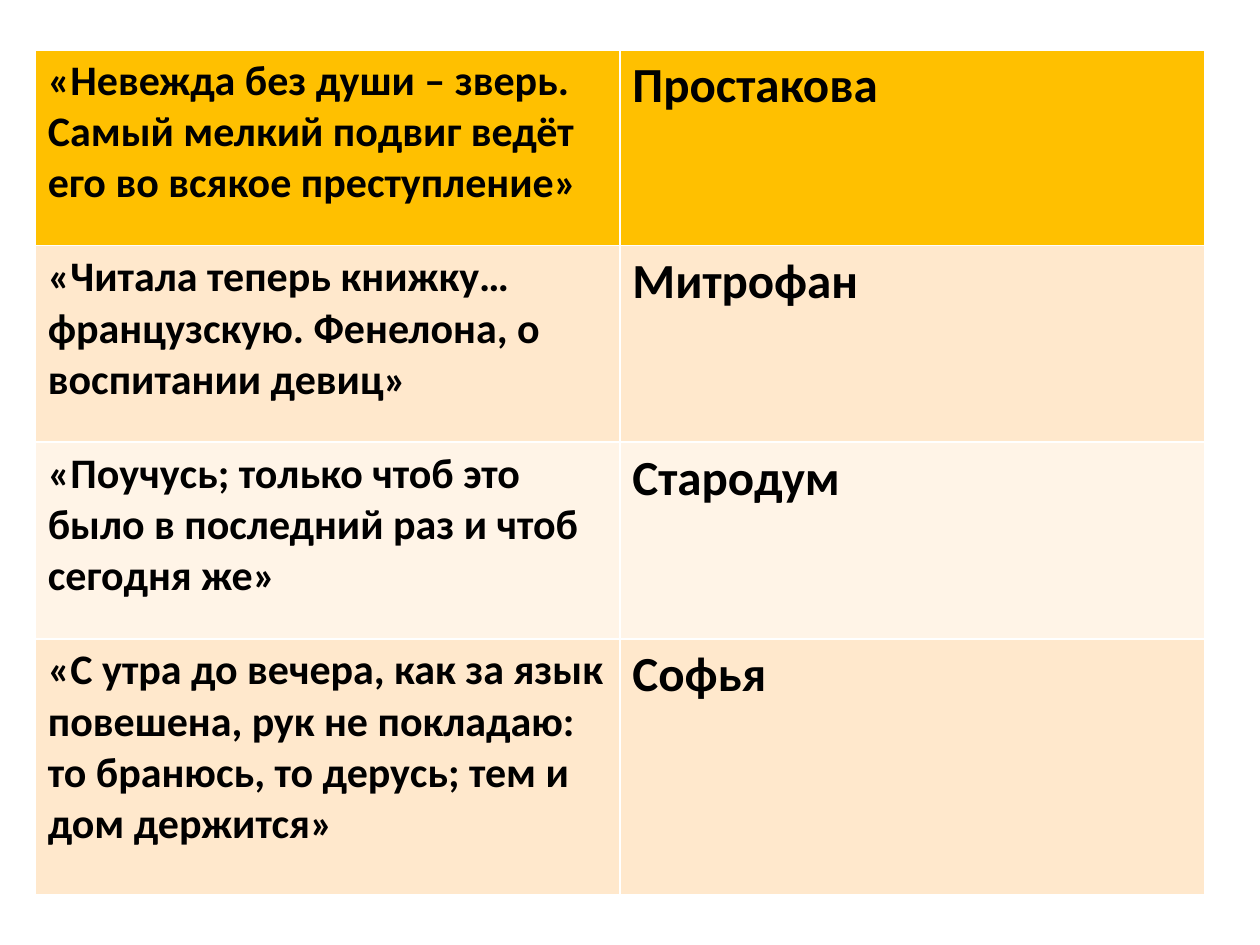
import pptx
import pptx.dml.color
import pptx.oxml
import pptx.oxml.ns
import pptx.util
from pptx.util import Inches, Pt

# Content: quotation paragraphs, character, row fill, row height
ROWS = [
    (["«Невежда без души – зверь. Самый мелкий подвиг ведёт его во всякое преступление»"],
     "Простакова", "FFC000", 1.56),
    (["«Читала теперь книжку… французскую. Фенелона, о воспитании девиц»"],
     "Митрофан", "FFE8CC", 1.56),
    (["«Поучусь; только чтоб это было в последний раз и чтоб", "сегодня же»"],
     "Стародум", "FFF4E7", 1.56),
    (["«С утра до вечера, как за язык повешена, рук не покладаю: "
      "то бранюсь, то дерусь; тем и дом держится»"],
     "Софья", "FFE8CC", 2.03),
]
LEFT, TOP, COL_WIDTH = 0.28, 0.39, 4.64
QUOTE_SIZE, NAME_SIZE = 24, 28


def rgb(value):
    return pptx.dml.color.RGBColor.from_string(value)


def set_borders(cell, top_width):
    """White rules on all four sides; they must precede the cell fill."""
    tcPr = cell._tc.get_or_add_tcPr()
    for side, width in (("L", 1), ("R", 1), ("T", top_width), ("B", 1)):
        tcPr.append(pptx.oxml.parse_xml(
            f'<a:ln{side} {pptx.oxml.ns.nsdecls("a")} w="{Pt(width)}">'
            f'<a:solidFill><a:srgbClr val="FFFFFF"/></a:solidFill></a:ln{side}>'))


def fill_cell(cell, lines, size, fill, top_width):
    set_borders(cell, top_width)
    cell.fill.solid()
    cell.fill.fore_color.rgb = rgb(fill)
    tf = cell.text_frame
    tf.text = "\n".join(lines)
    for p in tf.paragraphs:
        p.font.name = "Calibri"
        p.font.size = Pt(size)
        p.font.bold = True
        p.font.color.rgb = rgb("000000")


prs = pptx.Presentation()
prs.slide_width, prs.slide_height = Inches(10), Inches(7.5)
s = prs.slides.add_slide(prs.slide_layouts[6])

# Table of quotations and characters
total_height = sum(row[3] for row in ROWS)
table = s.shapes.add_table(len(ROWS), 2, Inches(LEFT), Inches(TOP),
                           Inches(2 * COL_WIDTH), Inches(total_height)).table
for column in table.columns:
    column.width = Inches(COL_WIDTH)

for i, (quote, name, fill, height) in enumerate(ROWS):
    table.rows[i].height = Inches(height)
    top_width = 3 if i == 0 else 1
    fill_cell(table.cell(i, 0), quote, QUOTE_SIZE, fill, top_width)
    fill_cell(table.cell(i, 1), [name], NAME_SIZE, fill, top_width)

prs.save("out.pptx")
